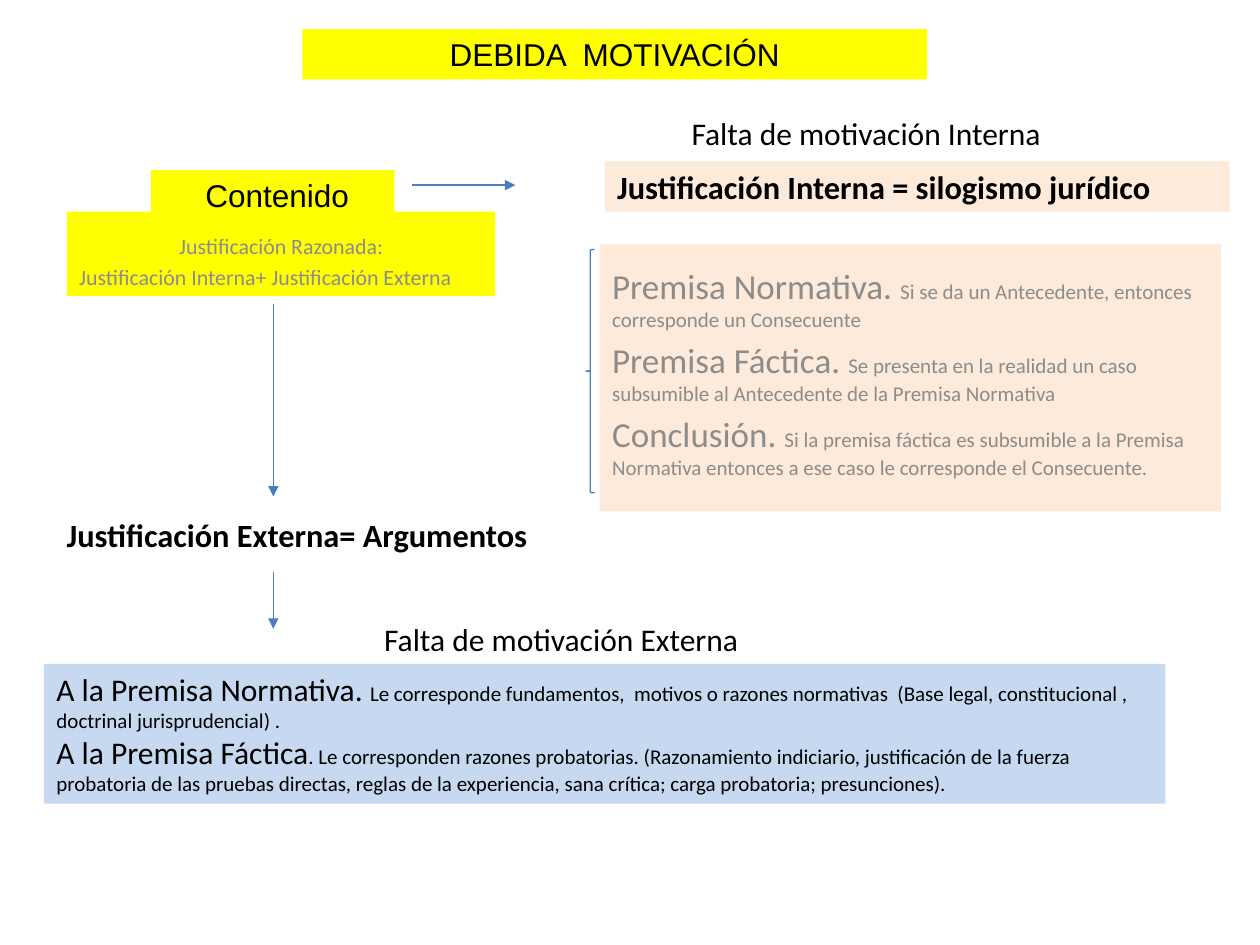
from collections import namedtuple
from lxml.etree import SubElement
from pptx import Presentation
from pptx.dml.color import RGBColor
from pptx.enum.shapes import MSO_CONNECTOR, MSO_SHAPE
from pptx.enum.text import MSO_ANCHOR, PP_ALIGN
from pptx.oxml.ns import qn
from pptx.util import Pt

YELLOW = RGBColor(0xFF, 0xFF, 0x00)
PEACH = RGBColor(0xFD, 0xEA, 0xDA)
SKY = RGBColor(0xC6, 0xD9, 0xF1)
BLUE = RGBColor(0x4B, 0x7E, 0xBC)
GRAY = RGBColor(0x8C, 0x8C, 0x8C)
BLACK = RGBColor(0x00, 0x00, 0x00)

LEFT, CENTER = PP_ALIGN.LEFT, PP_ALIGN.CENTER
TOP, BOTTOM = MSO_ANCHOR.TOP, MSO_ANCHOR.BOTTOM
BAR_HEIGHT = 28.8
DOWN_X = 156.2

Box = namedtuple("Box", "left top width height")
Span = namedtuple("Span", "text size bold", defaults=(False,))


def add_panel(page, box, fill=None):
    place = [Pt(length) for length in box]
    if fill is None:
        return page.shapes.add_textbox(*place)
    panel = page.shapes.add_shape(MSO_SHAPE.RECTANGLE, *place)
    panel.shadow.inherit = False
    panel.fill.solid()
    panel.fill.fore_color.rgb = fill
    panel.line.fill.background()
    return panel


def write(panel, paras, font="Calibri", color=BLACK, aligns=(LEFT,),
          anchor=TOP, spaced=False, wrap=True):
    frame = panel.text_frame
    frame.word_wrap = wrap
    frame.vertical_anchor = anchor
    for index, spans in enumerate(paras):
        para = frame.add_paragraph() if index else frame.paragraphs[0]
        para.alignment = aligns[index % len(aligns)]
        if spaced:
            para.space_before = Pt(round(0.2 * spans[0].size, 1))
        for span in spans:
            run = para.add_run()
            run.text = span.text
            run.font.name = font
            run.font.size = Pt(span.size)
            run.font.bold = span.bold
            run.font.color.rgb = color
    return frame


def add_arrow(page, start, end):
    arrow = page.shapes.add_connector(
        MSO_CONNECTOR.STRAIGHT, *[Pt(length) for length in start + end])
    arrow.line.color.rgb = BLUE
    arrow.line.width = Pt(0.75)
    SubElement(arrow.line._get_or_add_ln(), qn("a:tailEnd"), type="triangle")
    SubElement(arrow._element.spPr, qn("a:effectLst"))


def add_title_bar(page, box, text):
    write(add_panel(page, box, YELLOW), [[Span(text, 18)]], "Arial",
          aligns=(CENTER,))


def add_caption(page, box, text):
    write(add_panel(page, box), [[Span(text, 18)]], wrap=False)


def add_heading(page, box, text, fill=None):
    write(add_panel(page, box, fill), [[Span(text, 18.5, True)]],
          anchor=BOTTOM, spaced=True)


def add_content(page, box):
    add_title_bar(page, Box(box.left + 48.2, box.top, 139, BAR_HEIGHT),
                  " Contenido")
    reasons = add_panel(
        page, Box(box.left, box.top + 23.8, box.width, box.height - 23.8), YELLOW)
    write(reasons,
          [[Span("Justificación Razonada:", 12.5)],
           [Span("Justificación Interna+ Justificación Externa", 12.5)]],
          color=GRAY, aligns=(CENTER, LEFT), anchor=BOTTOM, spaced=True)


def add_premises(page, box):
    panel = add_panel(page, Box(box.left + 7.9, box.top, box.width - 7.9,
                                box.height), PEACH)
    frame = write(panel, [
        [Span("Premisa Normativa. ", 20),
         Span("Si se da un Antecedente, entonces corresponde un Consecuente", 12)],
        [Span("Premisa Fáctica. ", 20),
         Span("Se presenta en la realidad un caso subsumible al Antecedente "
              "de la Premisa Normativa", 12)],
        [Span("Conclusión. ", 20),
         Span("Si la premisa fáctica es subsumible a la Premisa Normativa "
              "entonces a ese caso le corresponde el Consecuente.", 12)],
    ], color=GRAY, anchor=BOTTOM, spaced=True)
    frame.margin_bottom = Pt(18)
    brace = page.shapes.add_shape(
        MSO_SHAPE.LEFT_BRACE, Pt(box.left), Pt(box.top + 2.9), Pt(5), Pt(139))
    brace.shadow.inherit = False
    brace.fill.background()
    brace.line.color.rgb = BLUE
    brace.line.width = Pt(0.75)


def add_arguments(page, box):
    write(add_panel(page, box, SKY), [
        [Span("A la Premisa Normativa. ", 18),
         Span("Le corresponde fundamentos,  motivos o razones normativas  "
              "(Base legal, constitucional , doctrinal jurisprudencial) .", 12)],
        [Span("A la Premisa Fáctica", 18),
         Span(". Le corresponden razones probatorias. (Razonamiento indiciario, "
              "justificación de la fuerza probatoria de las pruebas directas, "
              "reglas de la experiencia, sana crítica; carga probatoria; "
              "presunciones).", 12)],
    ])


def main():
    deck = Presentation()
    deck.slide_width, deck.slide_height = Pt(720), Pt(540)
    page = deck.slides.add_slide(deck.slide_layouts[6])
    add_title_bar(page, Box(172.8, 16.6, 357.1, BAR_HEIGHT), "DEBIDA  MOTIVACIÓN")
    add_content(page, Box(38.2, 97.2, 244.8, 72))
    add_caption(page, Box(388.1, 61.9, 216.7, BAR_HEIGHT),
                "Falta de motivación Interna")
    add_heading(page, Box(345.6, 92.2, 357.1, BAR_HEIGHT),
                "Justificación Interna = silogismo jurídico", PEACH)
    add_premises(page, Box(334.8, 139.7, 362.9, 152.6))
    add_heading(page, Box(31, 291.6, 314.6, BAR_HEIGHT),
                "Justificación Externa= Argumentos")
    add_caption(page, Box(212.4, 350.6, 219.6, BAR_HEIGHT),
                "Falta de motivación Externa")
    add_arguments(page, Box(25.2, 379.4, 640.8, 79.9))
    add_arrow(page, (235.4, 105.8), (294.5, 105.8))
    for top, bottom in ((173.5, 283.7), (326.9, 359.3)):
        add_arrow(page, (DOWN_X, top), (DOWN_X, bottom))
    deck.save("out.pptx")


if __name__ == "__main__":
    main()
